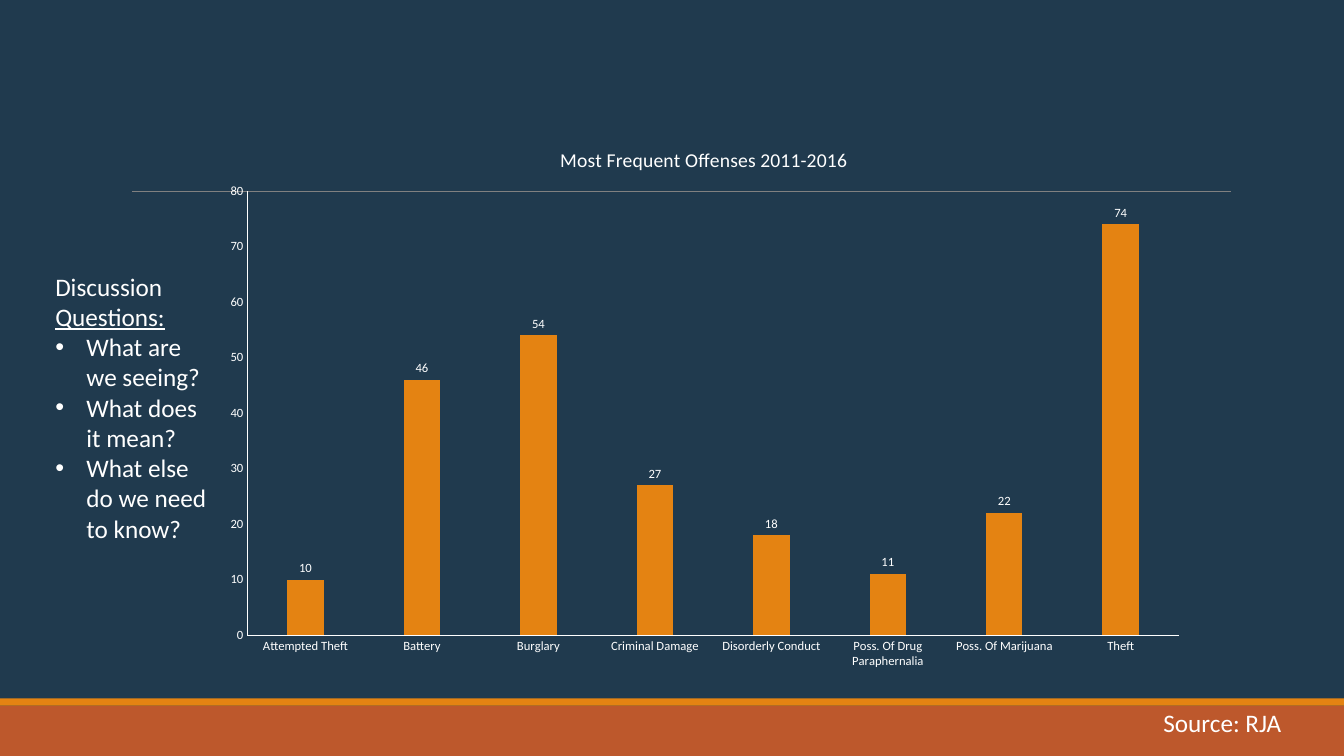
from lxml import etree
from pptx import Presentation
from pptx.chart.data import CategoryChartData
from pptx.dml.color import RGBColor
from pptx.enum.chart import XL_CHART_TYPE as ChartType, XL_LABEL_POSITION as LabelPos, XL_TICK_MARK as Tick
from pptx.enum.shapes import MSO_CONNECTOR as Connector, MSO_SHAPE as Shape
from pptx.enum.text import MSO_AUTO_SIZE as AutoSize
from pptx.oxml import parse_xml
from pptx.oxml.ns import nsdecls, qn
from pptx.util import Inches, Pt

# Content
FONT, WHITE, ORANGE = "Calibri", "FFFFFF", "E48312"
BACKGROUND, RUST, GRAY = "203A4E", "BD582C", "808080"
SLIDE_W, SLIDE_H = 13.33, 7.5

BANDS = [(7.0, 0.5, RUST), (6.93, 0.07, ORANGE)]  # top, height, colour
SOURCE = "Source: RJA"
HEADING = [("Discussion ", False), ("Questions:", True)]  # text, underlined
QUESTIONS = ["What are we seeing?", "What does it mean?", "What else do we need to know?"]

CHART_TITLE = "Most Frequent Offenses 2011-2016"
OFFENSES = {
    "Attempted Theft": 10,
    "Battery": 46,
    "Burglary": 54,
    "Criminal Damage": 27,
    "Disorderly Conduct": 18,
    "Poss. Of Drug Paraphernalia": 11,
    "Poss. Of Marijuana": 22,
    "Theft": 74,
}
CHART_BOX = (2.09, 1.19, 9.8, 5.55)
TITLE_AREA = {"x": 0.35, "y": 0.04}
PLOT_AREA = {"x": 0.037, "y": 0.127, "w": 0.943, "h": 0.794}  # shares of the chart box


def color(hex_value):
    return RGBColor.from_string(hex_value)


def paint(fill, hex_value):
    fill.solid()
    fill.fore_color.rgb = color(hex_value)


def style(font, size, **formats):
    for name, value in {"name": FONT, "size": Pt(size), "bold": False, **formats}.items():
        setattr(font, name, value)
    font.color.rgb = color(WHITE)


def add_run(paragraph, text, size=18, **formats):
    run = paragraph.add_run()
    run.text = text
    style(run.font, size, **formats)


def add_text_frame(slide, box, wrap):
    frame = slide.shapes.add_textbox(*map(Inches, box)).text_frame
    frame.word_wrap = wrap
    frame.auto_size = AutoSize.SHAPE_TO_FIT_TEXT
    return frame


def add_bullet(paragraph, indent=0.31):
    props = paragraph._p.get_or_add_pPr()
    props.set("marL", str(Inches(indent)))
    props.set("indent", str(-Inches(indent)))
    etree.SubElement(props, qn("a:buFont"), typeface="Arial")
    etree.SubElement(props, qn("a:buChar"), char="•")


def layout_xml(area, inner=False):
    target = '<c:layoutTarget val="inner"/>' if inner else ""
    modes = "".join(f'<c:{key}Mode val="edge"/>' for key in "xy")
    values = "".join(f'<c:{key} val="{value}"/>' for key, value in area.items())
    return parse_xml(f'<c:layout {nsdecls("c")}><c:manualLayout>{target}{modes}{values}'
                     "</c:manualLayout></c:layout>")


def add_offense_chart(slide):
    data = CategoryChartData()
    data.categories = list(OFFENSES)
    data.add_series("Series 1", list(OFFENSES.values()))
    chart = slide.shapes.add_chart(ChartType.COLUMN_CLUSTERED, *map(Inches, CHART_BOX), data).chart
    chart.has_legend = False
    style(chart.font, 10)

    # Title and plot positions
    chart.has_title = True
    add_run(chart.chart_title.text_frame.paragraphs[0], CHART_TITLE, 14)
    title = chart.chart_title._element
    plot_area = chart._chartSpace.chart.plotArea
    for parent, layout in ((title, layout_xml(TITLE_AREA)), (plot_area, layout_xml(PLOT_AREA, True))):
        for old in parent.findall(qn("c:layout")):
            parent.remove(old)
        parent.insert(1 if parent is title else 0, layout)

    # Axes
    for axis in (chart.category_axis, chart.value_axis):
        axis.has_major_gridlines = False
        axis.major_tick_mark = axis.minor_tick_mark = Tick.NONE
        style(axis.tick_labels.font, 9)
        axis.format.line.width = Pt(0.75)
        axis.format.line.color.rgb = color(WHITE)
    scale = {"minimum_scale": 0, "maximum_scale": 80, "major_unit": 10}
    for name, value in scale.items():
        setattr(chart.value_axis, name, value)

    # Columns and their values
    plot = chart.plots[0]
    for name, value in {"gap_width": 219, "overlap": -27, "vary_by_categories": False}.items():
        setattr(plot, name, value)
    columns = plot.series[0]
    paint(columns.format.fill, ORANGE)
    labels = columns.data_labels
    labels.show_value = True
    labels.position = LabelPos.OUTSIDE_END
    style(labels.font, 9)


def main():
    deck = Presentation()
    deck.slide_width, deck.slide_height = Inches(SLIDE_W), Inches(SLIDE_H)
    slide = deck.slides.add_slide(deck.slide_layouts[6])
    paint(slide.background.fill, BACKGROUND)

    # Footer bands
    for top, height, hex_value in BANDS:
        band = slide.shapes.add_shape(Shape.RECTANGLE, 0, Inches(top), Inches(SLIDE_W), Inches(height))
        band.shadow.inherit = False
        paint(band.fill, hex_value)
        band.line.fill.background()

    # Rule across the slide
    rule = slide.shapes.add_connector(Connector.STRAIGHT, *map(Inches, (1.31, 1.9, 12.21, 1.9)))
    rule.line.width = Pt(0.5)
    rule.line.color.rgb = color(GRAY)
    etree.SubElement(rule._element.spPr, qn("a:effectLst"))

    # Source
    source = add_text_frame(slide, (11.44, 6.97, 1.39, 0.4), False)
    add_run(source.paragraphs[0], SOURCE)

    add_offense_chart(slide)

    # Discussion questions
    discussion = add_text_frame(slide, (0.45, 2.64, 1.77, 2.83), True)
    for text, underlined in HEADING:
        add_run(discussion.paragraphs[0], text, underline=underlined)
    for question in QUESTIONS:
        paragraph = discussion.add_paragraph()
        add_bullet(paragraph)
        add_run(paragraph, question)

    deck.save("out.pptx")


if __name__ == "__main__":
    main()
